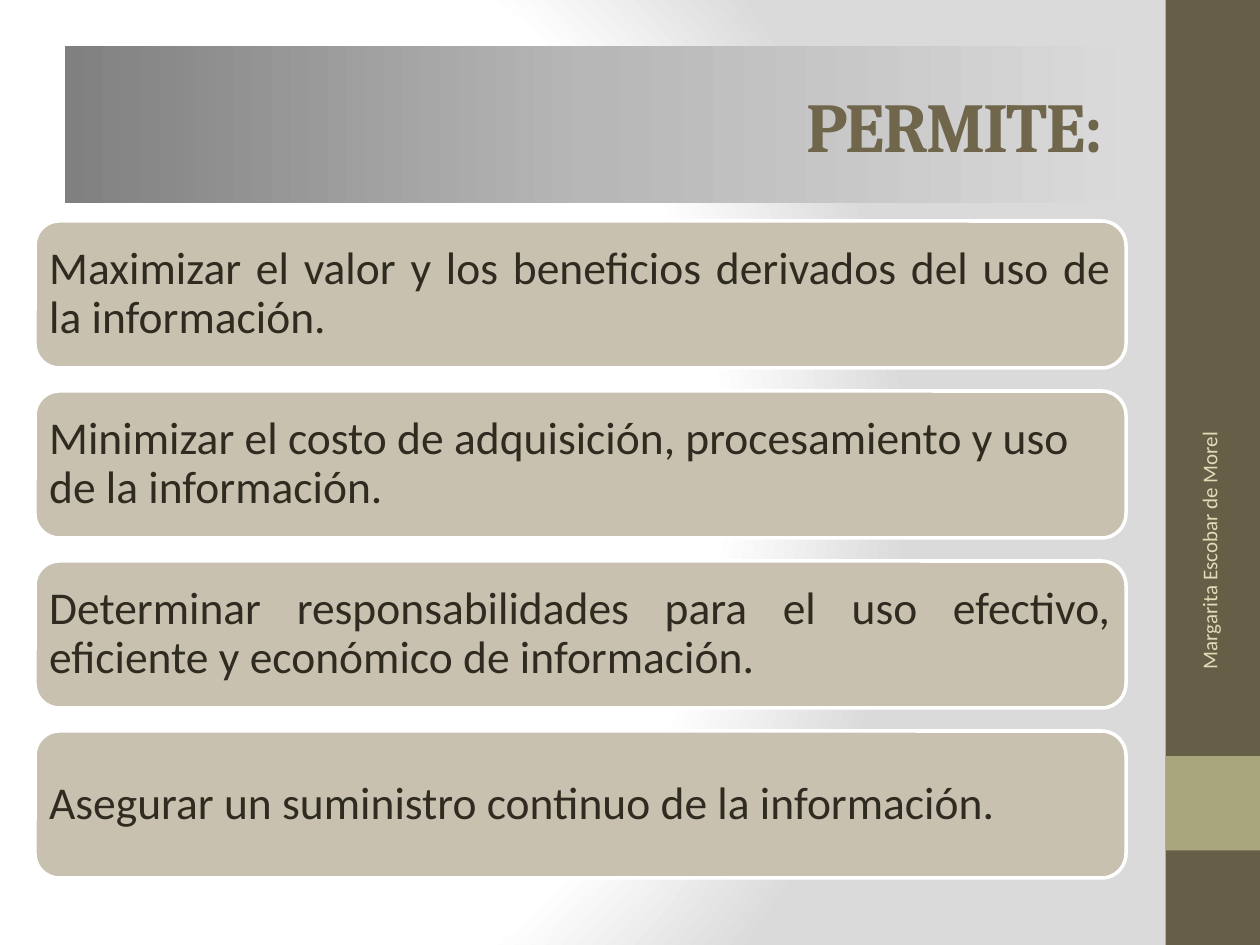
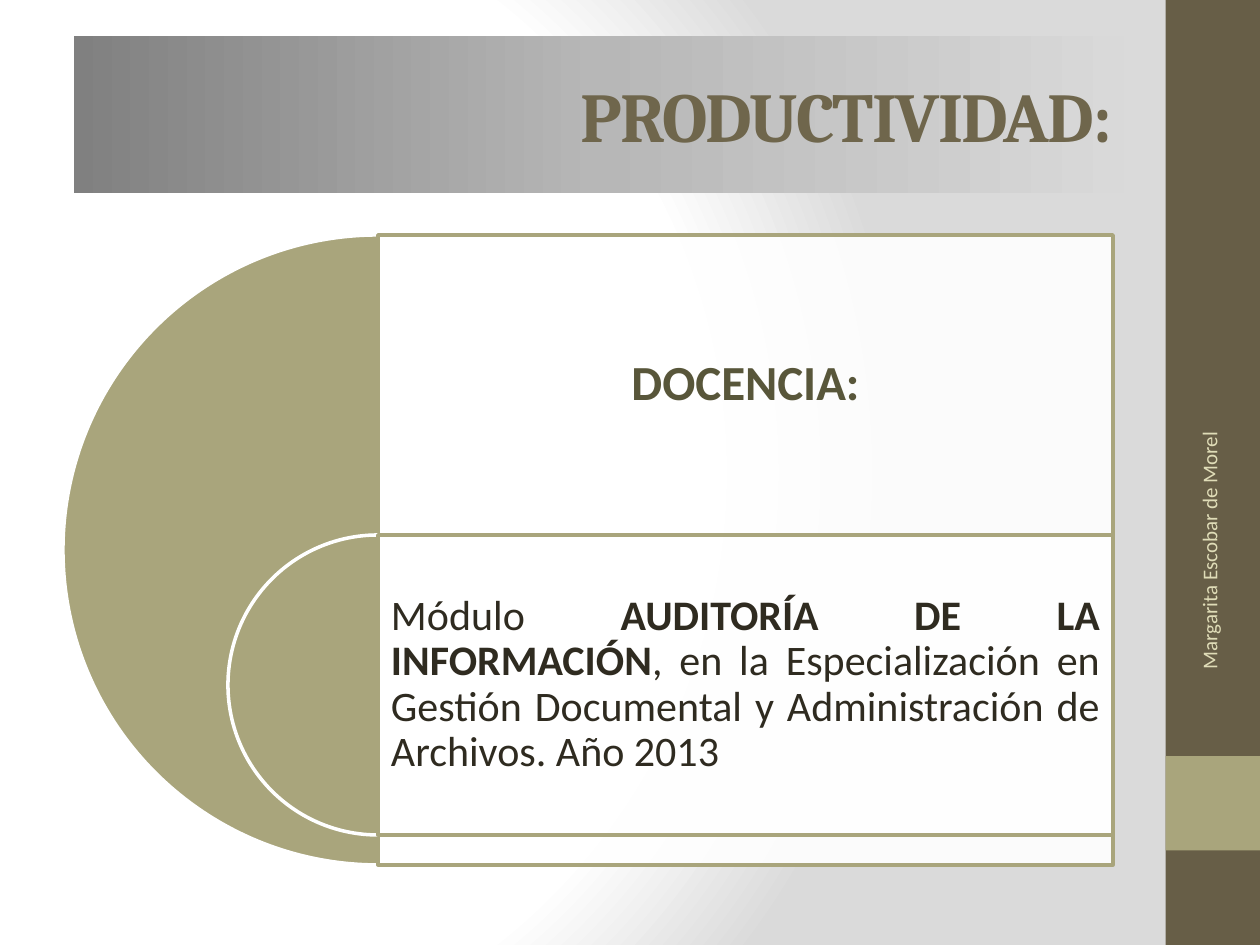
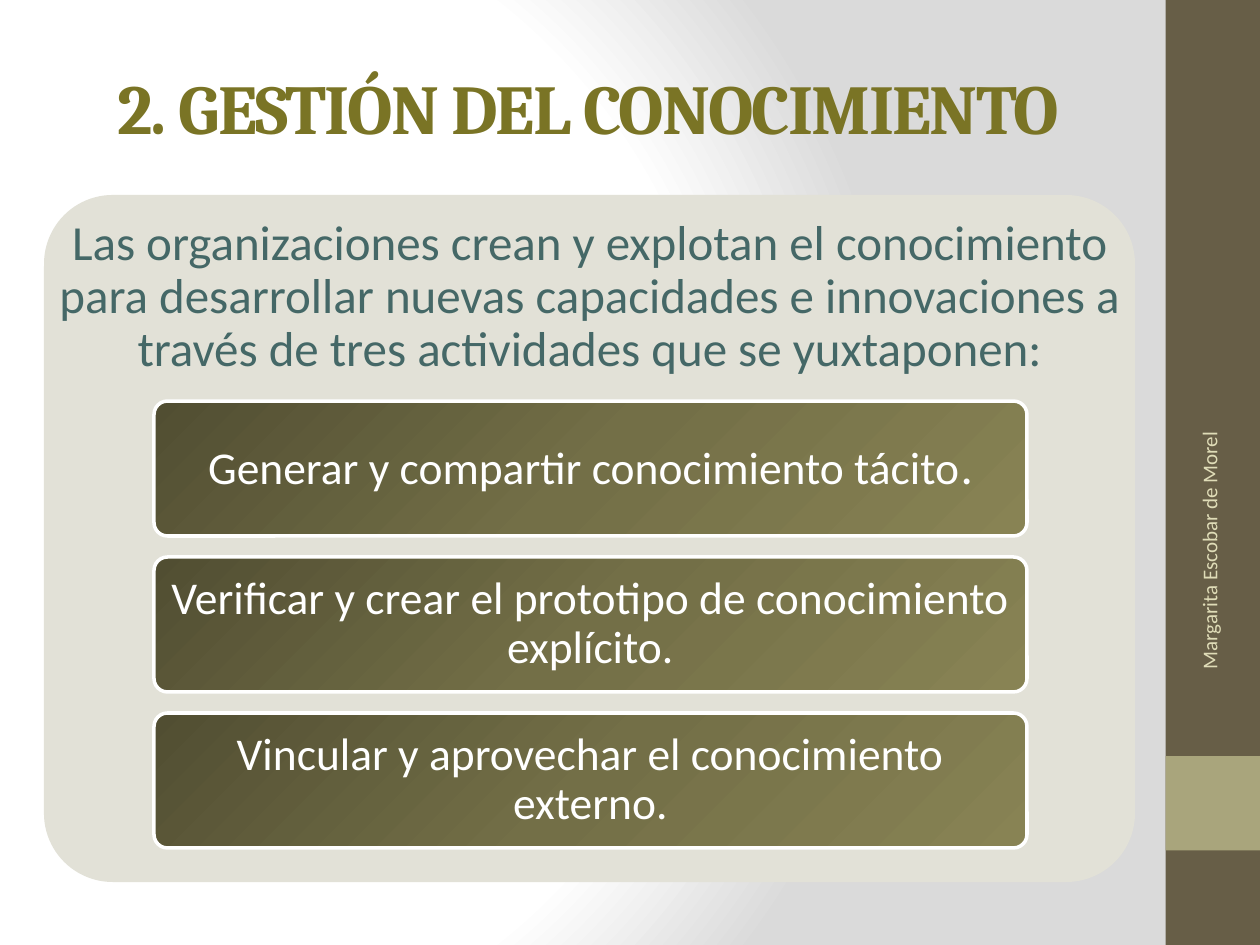
"""Build three slides on information audit and knowledge management."""
from pptx import Presentation
from pptx import util as u
from pptx.dml.color import RGBColor
from pptx.enum import shapes, text
from pptx.oxml import parse_xml
from pptx.oxml.ns import nsdecls, qn

PX_PER_INCH = 126
COLORS = {
    "white": "FFFFFF", "band": "675E47", "accent": "A9A57C", "footer": "DFDCB7",
    "title": "6F664C", "olive_title": "7A7425", "card": "C8C1AF", "ink": "2F2B20",
    "heading": "58563A", "panel": "E2E1D7", "intro": "456867",
}
BACKDROP = [(0, "FFFFFF"), (75, "FFFFFF"), (100, "DADADA")]
TITLE_FADE = [(0, "808080"), (50, "B7B7B7"), (100, "D9D9D9")]
STEP_FADE = [(0, "514E32"), (50, "736F47"), (100, "888354")]
RADIAL = ('<a:path path="circle"><a:fillToRect l="20000" t="50000" '
          'r="100000" b="50000"/></a:path>')
LEFT, CENTER, RIGHT, JUSTIFY = (
    text.PP_ALIGN.LEFT, text.PP_ALIGN.CENTER, text.PP_ALIGN.RIGHT, text.PP_ALIGN.JUSTIFY)
RECT = shapes.MSO_SHAPE.RECTANGLE
ROUNDED = shapes.MSO_SHAPE.ROUNDED_RECTANGLE
PIE = shapes.MSO_SHAPE.PIE
HALF_DISC = (54, 162)

BENEFITS = [
    ("Maximizar el valor y los beneficios derivados del uso de la información.", JUSTIFY),
    ("Minimizar el costo de adquisición, procesamiento y uso de la información.", LEFT),
    ("Determinar responsabilidades para el uso efectivo, eficiente y económico "
     "de información.", JUSTIFY),
    ("Asegurar un suministro continuo de la información.", JUSTIFY),
]
MODULE = [
    ("Módulo ", {}),
    ("AUDITORÍA DE LA INFORMACIÓN", {"bold": True}),
    (", en la Especialización en Gestión Documental y Administración de Archivos. "
     "Año 2013", {}),
]
INTRO = ("Las organizaciones crean y explotan el conocimiento para desarrollar nuevas "
         "capacidades e innovaciones a través de tres actividades que se yuxtaponen:")
ACTIVITIES = [
    [("Generar y compartir conocimiento tácito", {}), (".", {"size": u.Pt(28)})],
    [("Verificar y crear el prototipo de conocimiento explícito.", {})],
    [("Vincular y aprovechar el conocimiento externo.", {})],
]


def px(length):
    """Turn pixels into EMU."""
    return u.Emu(round(length * 914400 / PX_PER_INCH))


def rgb(name):
    """Look up a palette colour."""
    return RGBColor.from_string(COLORS[name])


def set_values(target, values):
    """Set each named value on the target."""
    for name, value in values.items():
        setattr(target, name, value)


def fade(fill, element, stops, direction):
    """Give a fill gradient stops and a direction."""
    fill.gradient()
    marks = "".join(f'<a:gs pos="{place * 1000}"><a:srgbClr val="{color}"/></a:gs>'
                    for place, color in stops)
    gradient = parse_xml(f'<a:gradFill {nsdecls("a")} rotWithShape="1"><a:gsLst>{marks}'
                         f'</a:gsLst>{direction}</a:gradFill>')
    default = element.find(f".//{qn('a:gradFill')}")
    default.getparent().replace(default, gradient)


def linear(degrees):
    """Describe a linear gradient direction."""
    return f'<a:lin ang="{degrees * 60000}" scaled="0"/>'


def write(shape, runs, size, color, align=CENTER, font="Calibri", bold=False,
          spacing=0.9, inset=(12, 6)):
    """Write one paragraph of formatted runs, centred vertically."""
    across, down = map(px, inset)
    frame = shape.text_frame
    set_values(frame, {
        "word_wrap": True, "vertical_anchor": text.MSO_ANCHOR.MIDDLE,
        "margin_left": across, "margin_right": across,
        "margin_top": down, "margin_bottom": down})
    paragraph = frame.paragraphs[0]
    set_values(paragraph, {"alignment": align, "line_spacing": spacing})
    for words, changes in runs:
        run = paragraph.add_run()
        run.text = words
        set_values(run.font, {"name": font, "size": u.Pt(size), "bold": bold, **changes})
        run.font.color.rgb = rgb(color)


def add_figure(slide, kind, box, fill=None, outline=None, adjustments=(), alpha=None):
    """Add a flat preset shape, with an optional 2 pt outline."""
    figure = slide.shapes.add_shape(kind, *map(px, box))
    figure.shadow.inherit = False
    for index, value in enumerate(adjustments):
        figure.adjustments[index] = value
    if fill:
        figure.fill.solid()
        figure.fill.fore_color.rgb = rgb(fill)
    else:
        figure.fill.background()
    if alpha:
        tint = figure.element.find(f".//{qn('a:solidFill')}/{qn('a:srgbClr')}")
        tint.append(parse_xml(f'<a:alpha {nsdecls("a")} val="{alpha * 1000}"/>'))
    if outline:
        figure.line.color.rgb = rgb(outline)
        figure.line.width = u.Pt(2)
    else:
        figure.line.fill.background()
    return figure


def add_text(slide, box, words, size, color, **style):
    """Add a text box with one run."""
    label = slide.shapes.add_textbox(*map(px, box))
    write(label, [(words, {})], size, color, **style)
    return label


def add_title(slide, box, words, color="title", align=RIGHT, stops=None):
    """Add the tight serif title, on a fading band if stops are given."""
    title = add_figure(slide, RECT, box)
    if stops:
        fade(title.fill, title.element, stops, linear(0))
    write(title, [(words, {})], 40, color, align, font="Cambria", bold=True, spacing=1.0)
    for properties in title.element.iter(qn("a:rPr")):
        properties.set("spc", "-100")


def add_framed_slide(prs):
    """Add a blank slide with the side band and the author's name."""
    slide = prs.slides.add_slide(prs.slide_layouts[6])
    add_figure(slide, RECT, (1165.5, 0, 94.5, 945), "band")
    add_figure(slide, RECT, (1165.5, 756, 94.5, 94.5), "accent")
    author = add_text(slide, (1046, 558, 326, 50), "Margarita Escobar de Morel", 12,
                      "footer", align=RIGHT, spacing=1.0)
    author.rotation = 270
    return slide


def add_benefits(prs):
    """Add the slide of stacked benefit cards."""
    slide = add_framed_slide(prs)
    add_title(slide, (65, 46, 1050, 157), "PERMITE:", stops=TITLE_FADE)
    for row, (benefit, align) in enumerate(BENEFITS):
        card = add_figure(slide, ROUNDED, (35, 221 + 170 * row, 1091, 147), "card", "white")
        write(card, [(benefit, {})], 26, "ink", align, inset=(7, 7))


def add_productivity(prs):
    """Add the slide of nested half discs and their boxes."""
    slide = add_framed_slide(prs)
    add_title(slide, (74, 36, 1050, 157), "PRODUCTIVIDAD:", stops=TITLE_FADE)
    boxes = []
    for left, top, size in ((63, 235, 630), (228, 535, 300)):
        add_figure(slide, PIE, (left, top, size, size), "accent", "white", HALF_DISC)
        boxes.append(add_figure(slide, RECT, (378, top, 735, size), "white", "accent",
                                alpha=90))
    add_text(slide, (378, 235, 735, 300), "DOCENCIA:", 28, "heading", bold=True,
             inset=(15, 15))
    write(boxes[1], MODULE, 24, "ink", JUSTIFY, inset=(13, 13))


def add_knowledge(prs):
    """Add the slide of knowledge activities inside a panel."""
    slide = add_framed_slide(prs)
    add_title(slide, (63, 38, 1050, 137), "2. GESTIÓN DEL CONOCIMIENTO", "olive_title", CENTER)
    add_figure(slide, ROUNDED, (44, 195, 1091, 687), "panel", adjustments=(0.1,))
    add_text(slide, (44, 195, 1091, 206), INTRO, 28, "intro", inset=(15, 15))
    for row, activity in enumerate(ACTIVITIES):
        step = add_figure(slide, ROUNDED, (154, 401 + 156 * row, 873, 135),
                          outline="white", adjustments=(0.1,))
        fade(step.fill, step.element, STEP_FADE, linear(45))
        write(step, activity, 26, "white", inset=(5, 2))


def main():
    """Build and save the presentation."""
    prs = Presentation()
    set_values(prs, {"slide_width": px(1260), "slide_height": px(945)})
    master = prs.slide_master
    fade(master.background.fill, master.element, BACKDROP, RADIAL)
    add_benefits(prs)
    add_productivity(prs)
    add_knowledge(prs)
    prs.save("out.pptx")


if __name__ == "__main__":
    main()
